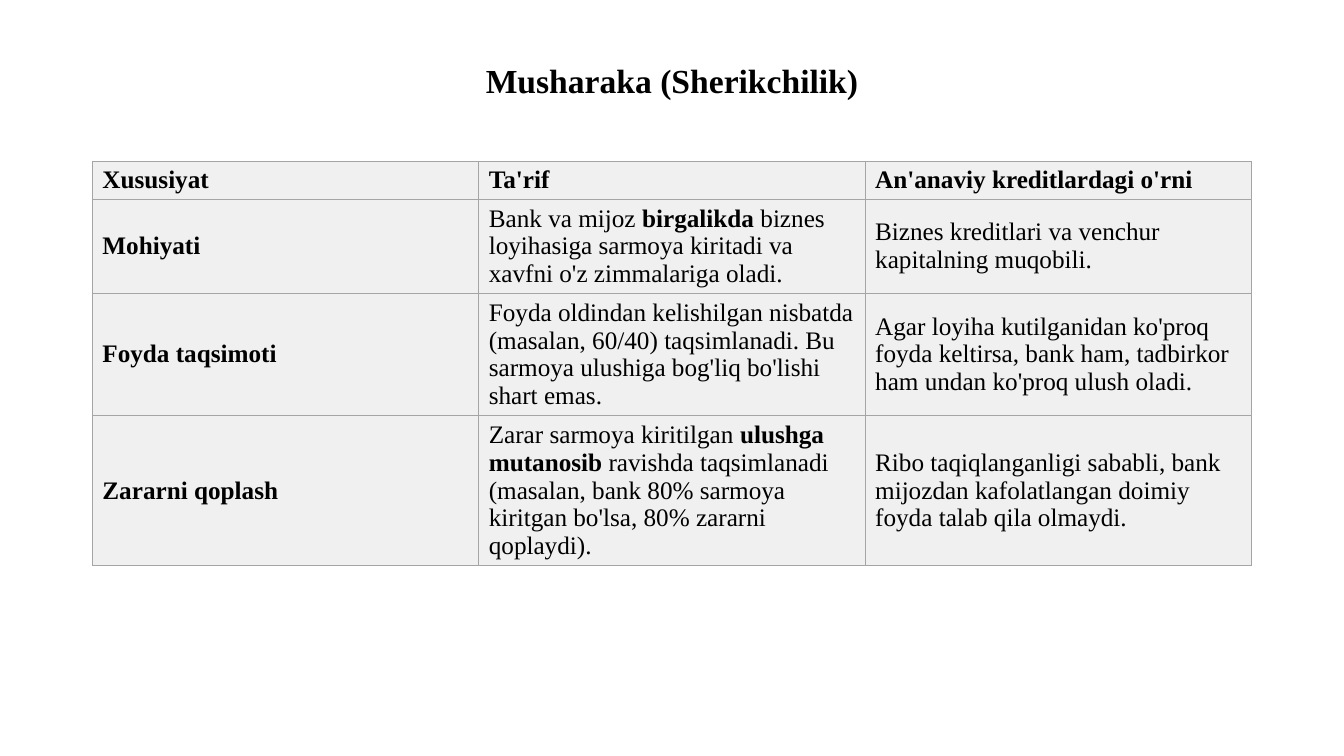
from lxml import etree
from pptx import Presentation
from pptx import util as u
from pptx.dml.color import RGBColor
from pptx.enum import text
from pptx.oxml import ns

COLORS = {"ink": "000000", "cell": "F0F0F0", "border": "A5A5A5"}
ROWS = [
    (1, ["*Xususiyat*", "*Ta'rif*", "*An'anaviy kreditlardagi o'rni*"]),
    (3, ["*Mohiyati*",
         "Bank va mijoz *birgalikda *biznes loyihasiga sarmoya kiritadi va "
         "xavfni o'z zimmalariga oladi.",
         "Biznes kreditlari va venchur kapitalning muqobili."]),
    (4, ["*Foyda taqsimoti*",
         "Foyda oldindan kelishilgan nisbatda (masalan, 60/40) taqsimlanadi. "
         "Bu sarmoya ulushiga bog'liq bo'lishi shart emas.",
         "Agar loyiha kutilganidan ko'proq foyda keltirsa, bank ham, tadbirkor "
         "ham undan ko'proq ulush oladi."]),
    (5, ["*Zararni qoplash*",
         "Zarar sarmoya kiritilgan *ulushga mutanosib *ravishda taqsimlanadi "
         "(masalan, bank 80% sarmoya kiritgan bo'lsa, 80% zararni qoplaydi).",
         "Ribo taqiqlanganligi sababli, bank mijozdan kafolatlangan doimiy "
         "foyda talab qila olmaydi."]),
]


class SlideBuilder:
    """Adds styled elements to one slide; asterisks in wording enclose bold text."""

    font_name = "Times New Roman"
    line_height = 20
    cell_padding = 7.2

    def __init__(self, slide):
        self.slide = slide

    def fill_paragraph(self, paragraph, wording, size):
        font = paragraph.font
        font.name = self.font_name
        font.size = u.Pt(size)
        font.color.rgb = RGBColor.from_string(COLORS["ink"])
        parts = [(index % 2 == 1, part)
                 for index, part in enumerate(wording.split("*")) if part]
        for bold, part in parts:
            run = paragraph.add_run()
            run.text = part
            if len(parts) > 1:
                run.font.bold = bold
        if len(parts) == 1:
            font.bold = parts[0][0]

    def title(self, wording, left, top, width, height):
        shape = self.slide.shapes.add_textbox(
            u.Pt(left), u.Pt(top), u.Pt(width), u.Pt(height))
        frame = shape.text_frame
        frame.word_wrap = False
        frame.vertical_anchor = text.MSO_ANCHOR.MIDDLE
        frame.margin_top = 0
        frame.margin_bottom = u.Pt(26)
        paragraph = frame.paragraphs[0]
        paragraph.alignment = text.PP_ALIGN.CENTER
        self.fill_paragraph(paragraph, wording, 24)

    def border(self, cell):
        properties = cell._tc.get_or_add_tcPr()
        for position, side in enumerate(("lnL", "lnR", "lnT", "lnB")):
            line = etree.Element(ns.qn(f"a:{side}"), w=str(u.Pt(1)))
            fill = etree.SubElement(line, ns.qn("a:solidFill"))
            etree.SubElement(fill, ns.qn("a:srgbClr"), val=COLORS["border"])
            properties.insert(position, line)

    def table(self, rows, left, top, width):
        heights = [lines * self.line_height + self.cell_padding for lines, _ in rows]
        column_count = len(rows[0][1])
        table = self.slide.shapes.add_table(
            len(rows), column_count, u.Pt(left), u.Pt(top),
            u.Pt(width), u.Pt(sum(heights))).table
        table.first_row = False
        table.horz_banding = False
        for column in table.columns:
            column.width = u.Pt(width / column_count)
        for row, height, (_, wordings) in zip(table.rows, heights, rows):
            row.height = u.Pt(height)
            for cell, wording in zip(row.cells, wordings):
                cell.fill.solid()
                cell.fill.fore_color.rgb = RGBColor.from_string(COLORS["cell"])
                cell.vertical_anchor = text.MSO_ANCHOR.MIDDLE
                self.border(cell)
                self.fill_paragraph(cell.text_frame.paragraphs[0], wording, 18)


def main():
    presentation = Presentation()
    presentation.slide_width = u.Pt(960)
    presentation.slide_height = u.Pt(540)
    builder = SlideBuilder(presentation.slides.add_slide(presentation.slide_layouts[6]))
    builder.table(ROWS, 66, 115.2, 828)
    builder.title("*Musharaka (Sherikchilik)*", 338.5, 41, 283, 58)
    presentation.save("out.pptx")


if __name__ == "__main__":
    main()
